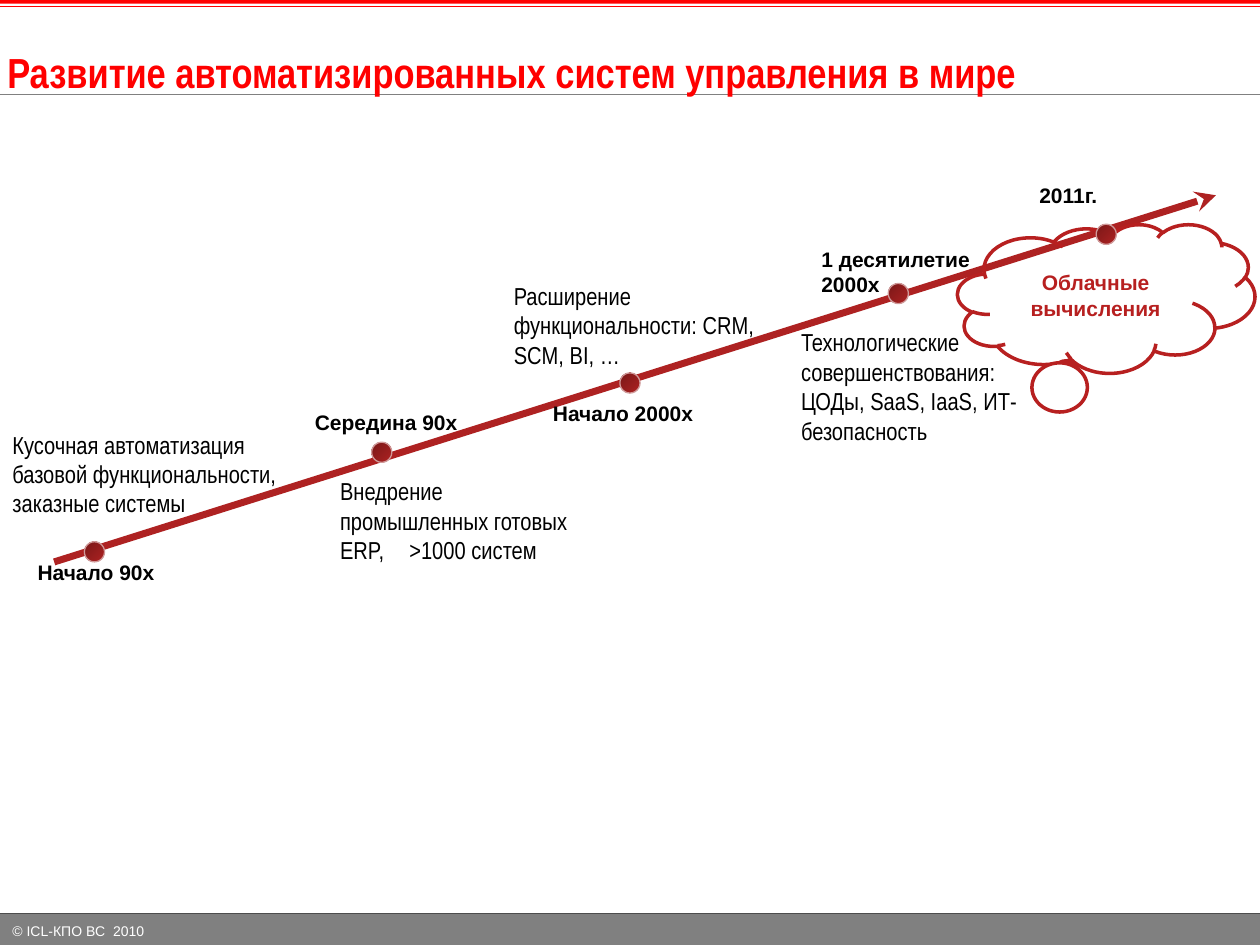
from lxml.etree import SubElement as Sub
from pptx import Presentation
from pptx.dml.color import RGBColor as Rgb
from pptx.enum.shapes import MSO_CONNECTOR as Conn, MSO_SHAPE as Kind
from pptx.enum.text import MSO_ANCHOR as Anchor, PP_ALIGN as Align
from pptx.oxml.ns import qn
from pptx.util import Inches, Pt

HUES = {"red": "FF0000", "gray": "808080", "dark": "4D4D4D", "white": "FFFFFF",
        "black": "000000", "axis": "AE2222", "deep": "7A1818", "rim": "D09A9A",
        "cloud": "B72020"}
WIDE, HIGH = 10, 7.5
FOOT = 7.25
DOT = 0.16

TITLE = "Развитие автоматизированных систем управления в мире"
RIGHTS = "© ICL-КПО ВС  2010"
CLOUD = "Облачные вычисления"

RULES = [(0.75, "gray", 0.5), (0.05, "red", 0.75), (FOOT, "dark", 0.5)]
DATES = [
    ("Начало 90х", (0.2, 4.39, 1.26, 0.3)),
    ("Середина 90х", (2.4, 3.2, 1.42, 0.3)),
    ("Начало 2000х", (4.29, 3.13, 1.5, 0.3)),
    ("1 десятилетие 2000х", (6.42, 1.91, 1.81, 0.5)),
    ("2011г.", (8.15, 1.4, 1.81, 0.3)),
]
NOTES = [
    (["Кусочная автоматизация базовой функциональности, заказные системы"],
     (0, 3.36, 2.32, 0.81)),
    (["Внедрение промышленных готовых ERP,\t>1000 систем"], (2.6, 3.73, 2.09, 0.81)),
    (["Расширение функциональности: СRM, SCM, BI, …"], (3.98, 2.18, 2.36, 0.81)),
    (["Технологические совершенствования:", "ЦОДы, SaaS, IaaS, ИТ-безопасность"],
     (6.26, 2.55, 2.44, 1.04)),
]
DOTS = [(0.67, 4.3), (2.95, 3.51), (4.92, 2.96), (7.05, 2.25), (8.7, 1.78)]

deck = Presentation()
deck.slide_width, deck.slide_height = Inches(WIDE), Inches(HIGH)
page = deck.slides.add_slide(deck.slide_layouts[6])


def hue(name):
    return Rgb.from_string(HUES[name])


def place(box):
    return [Inches(side) for side in box]


def write(shape, lines, size, tint, font="Arial", bold=False,
          align=Align.LEFT, anchor=Anchor.TOP):
    frame = shape.text_frame
    frame.word_wrap = True
    frame.vertical_anchor = anchor
    for num, line in enumerate(lines):
        para = frame.add_paragraph() if num else frame.paragraphs[0]
        para.alignment = align
        if "\t" in line:
            tabs = Sub(para._p.get_or_add_pPr(), qn("a:tabLst"))
            Sub(tabs, qn("a:tab"), pos=str(Inches(0.55)), algn="l")
        run = para.add_run()
        run.text = line
        run.font.size, run.font.name, run.font.bold = Pt(size), font, bold
        run.font.color.rgb = hue(tint)


def label(lines, box, *args, **more):
    write(page.shapes.add_textbox(*place(box)), lines, *args, **more)


def form(kind, box, fill=None, edge=None, width=2):
    shape = page.shapes.add_shape(kind, *place(box))
    shape.shadow.inherit = False
    if fill:
        shape.fill.solid()
        shape.fill.fore_color.rgb = hue(fill)
    else:
        shape.fill.background()
    if edge:
        shape.line.color.rgb = hue(edge)
        shape.line.width = Pt(width)
    else:
        shape.line.fill.background()
    return shape


def rule(ends, tint, width):
    line = page.shapes.add_connector(Conn.STRAIGHT, *place(ends))
    line.line.color.rgb = hue(tint)
    line.line.width = Pt(width)
    Sub(line._element.spPr, qn("a:effectLst"))
    return line


form(Kind.RECTANGLE, (0, 0, WIDE, 0.03), "red")
form(Kind.RECTANGLE, (0, FOOT, WIDE, HIGH - FOOT), "gray")
for top, tint, width in RULES:
    rule((0, top, WIDE, top), tint, width)
write(form(Kind.RECTANGLE, (0, 7.27, 1.26, 0.23), "gray"), [RIGHTS], 8, "white",
      anchor=Anchor.MIDDLE)
label([TITLE], (-0.04, 0.14, 9.25, 0.85), 24, "red", "Arial Narrow", True,
      anchor=Anchor.MIDDLE)

axis = rule((0.43, 4.46, 9.65, 1.55), "axis", 4)
Sub(axis.line._get_or_add_ln(), qn("a:tailEnd"), type="stealth")

for text, box in DATES:
    label([text], box, 12, "black", bold=True)
for lines, box in NOTES:
    label(lines, box, 14, "black", "Arial Narrow")

cloud = form(Kind.CLOUD_CALLOUT, (7.6, 1.78, 2.36, 1.18), edge="cloud")
cloud.adjustments[0], cloud.adjustments[1] = -0.16, 0.59
write(cloud, [CLOUD], 12, "cloud", bold=True, align=Align.CENTER, anchor=Anchor.MIDDLE)
form(Kind.OVAL, (8.19, 2.88, 0.44, 0.39), "white", "cloud")

for left, top in DOTS:
    dot = form(Kind.FLOWCHART_CONNECTOR, (left, top, DOT, DOT), "axis", "rim", 0.75)
    dot.fill.gradient()
    dot.fill.gradient_angle = 135
    for stop, tint in zip(dot.fill.gradient_stops, ("axis", "deep")):
        stop.color.rgb = hue(tint)

deck.save("out.pptx")
